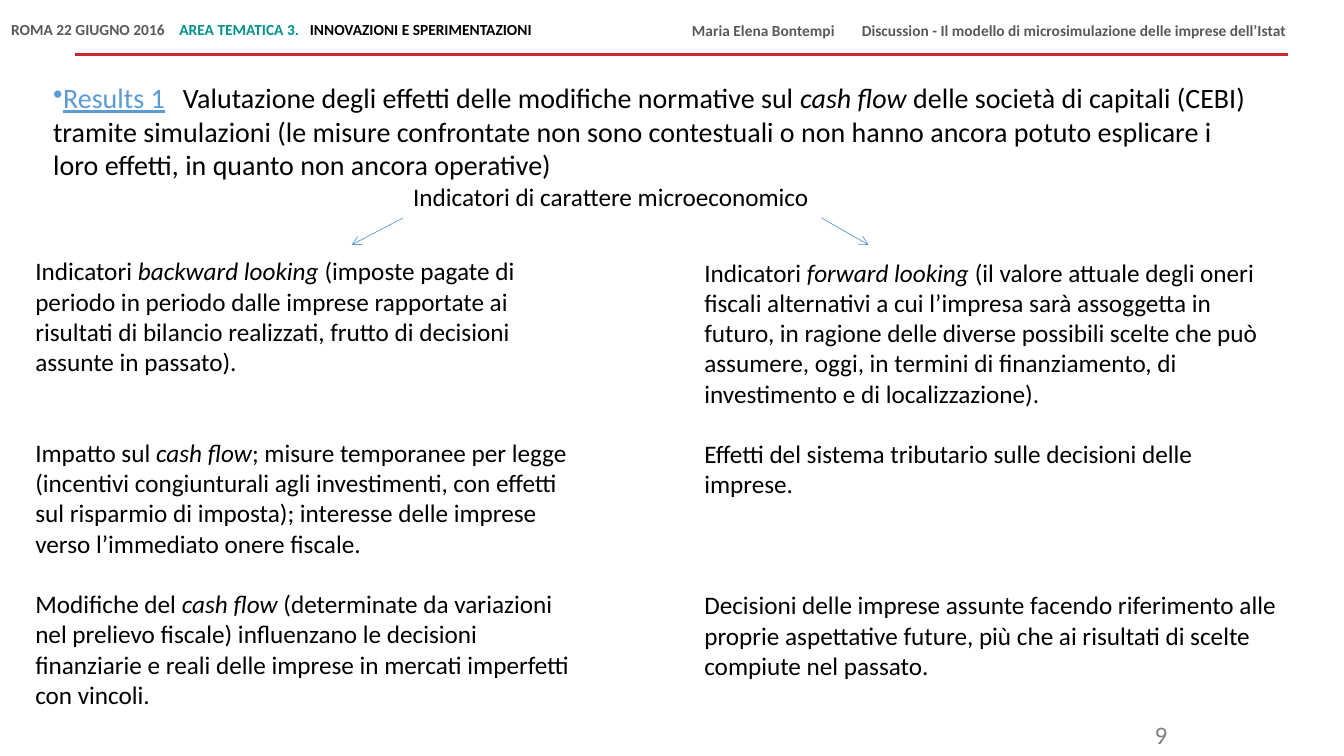
from lxml.etree import SubElement as Sub
from pptx import Presentation
from pptx.dml.color import RGBColor as RGB
from pptx.enum.shapes import MSO_CONNECTOR as Link
from pptx.enum.text import PP_ALIGN as Align
from pptx.oxml.ns import qn
from pptx.util import Cm, Pt

HUES = {"red": "C72A31", "gray": "595959", "teal": "009190", "black": "000000",
        "pale": "7F7F7F", "blue": "5B9BD5"}
PITCH = 21.6

SLANT = {"italic": True}
DARK = {"bold": True, "hue": "gray"}
HEAD = {"size": 11, "inset": 0, "lead": Pt(10.8)}

BOXES = [
    {"at": (0.28, 0.58, 13.79, 0.41), **HEAD, "tabs": (4.24, 7.53), "paras": [
        (0, [("ROMA 22 GIUGNO 2016", DARK),
             ("\tAREA TEMATICA 3.", {"bold": True, "hue": "teal"}),
             ("\tINNOVAZIONI E SPERIMENTAZIONI", {"bold": True})])]},
    {"at": (17.44, 0.61, 15.5, 0.41), **HEAD, "tabs": (4.28,), "paras": [
        (0, [("Maria Elena Bontempi\tDiscussion - Il modello di microsimulazione "
              "delle imprese dell’Istat", DARK)])]},
    {"at": (27.66, 18.01, 2.01, 0.89), "align": Align.RIGHT, "paras": [
        (0, [("9", {"hue": "pale"})])]},
    {"at": (1.09, 1.91, 30.68, 2.46), "size": 20, "tabs": (3.27,), "bullet": "•", "paras": [
        (0, [("Results 1", {"hue": "blue", "underline": True}),
             ("\tValutazione degli effetti delle modifiche normative sul ", {}),
             ("cash flow ", SLANT),
             ("delle società di capitali (CEBI) tramite simulazioni (le misure confrontate "
              "non sono contestuali o non hanno ancora potuto esplicare i loro effetti, "
              "in quanto non ancora operative)", {})])]},
    {"at": (0.64, 6.32, 14.33, 11.79), "paras": [
        (0, [("Indicatori ", {}), ("backward looking ", SLANT),
             ("(imposte pagate di periodo in periodo dalle imprese rapportate ai risultati "
              "di bilancio realizzati, frutto di decisioni assunte in passato).", {})]),
        (2, [("Impatto sul ", {}), ("cash flow", SLANT),
             ("; misure temporanee per legge (incentivi congiunturali agli investimenti, "
              "con effetti sul risparmio di imposta); interesse delle imprese verso "
              "l’immediato onere fiscale.", {})]),
        (1, [("Modifiche del ", {}), ("cash flow ", SLANT),
             ("(determinate da variazioni nel prelievo fiscale) influenzano le decisioni "
              "finanziarie e reali delle imprese in mercati imperfetti con vincoli.", {})])]},
    {"at": (17.5, 6.35, 15.09, 11.02), "paras": [
        (0, [("Indicatori ", {}), ("forward looking ", SLANT),
             ("(il valore attuale degli oneri fiscali alternativi a cui l’impresa sarà "
              "assoggetta in futuro, in ragione delle diverse possibili scelte che può "
              "assumere, oggi, in termini di finanziamento, di investimento e di "
              "localizzazione).", {})]),
        (1, [("Effetti del sistema tributario sulle decisioni delle imprese.", {})]),
        (3, [("Decisioni delle imprese assunte facendo riferimento alle proprie aspettative "
              "future, più che ai risultati di scelte compiute nel passato.", {})])]},
    {"at": (10.16, 4.45, 10.92, 1.02), "paras": [
        (0, [("Indicatori di carattere microeconomico", {})])]},
]

LINES = [
    ((32.46, 1.37, 1.9, 1.37), "red", 2, False),
    ((10.16, 5.49, 8.86, 6.17), "blue", 0.5, True),
    ((20.7, 5.49, 21.89, 6.17), "blue", 0.5, True),
]


def paint(run, size, look):
    form = {"name": "Calibri", "size": Pt(size), **look}
    hue = form.pop("hue", "black")
    for key, val in form.items():
        setattr(run.font, key, val)
    run.font.color.rgb = RGB.from_string(HUES[hue])


def mark(para, box):
    props = para._p.get_or_add_pPr()
    if "bullet" in box:
        props.set("marL", "0")
        props.set("indent", "0")
        Sub(props, qn("a:buChar"), char=box["bullet"])
    if "tabs" in box:
        tabs = Sub(props, qn("a:tabLst"))
        for pos in box["tabs"]:
            Sub(tabs, qn("a:tab"), pos=str(int(Cm(pos))), algn="l")


def write(slide, box):
    frame = slide.shapes.add_textbox(*map(Cm, box["at"])).text_frame
    frame.word_wrap = True
    if "inset" in box:
        for side in ("left", "top", "right", "bottom"):
            setattr(frame, "margin_" + side, Cm(box["inset"]))
    for i, (gap, runs) in enumerate(box["paras"]):
        para = frame.add_paragraph() if i else frame.paragraphs[0]
        mark(para, box)
        form = {"alignment": box.get("align", Align.LEFT),
                "line_spacing": box.get("lead", 1.0), "space_before": Pt(gap * PITCH)}
        for key, val in form.items():
            setattr(para, key, val)
        for text, look in runs:
            run = para.add_run()
            run.text = text
            paint(run, box.get("size", 18), look)


def draw(slide, ends, hue, width, tip):
    link = slide.shapes.add_connector(Link.STRAIGHT, *map(Cm, ends))
    link.line.color.rgb = RGB.from_string(HUES[hue])
    link.line.width = Pt(width)
    if tip:
        Sub(link.line._get_or_add_ln(), qn("a:tailEnd"), type="arrow")
    Sub(link._element.spPr, qn("a:effectLst"))


def main():
    """Build the slide on results of the cash flow simulations."""
    deck = Presentation()
    deck.slide_width, deck.slide_height = Cm(33.87), Cm(19.05)
    slide = deck.slides.add_slide(deck.slide_layouts[6])
    for line in LINES:
        draw(slide, *line)
    for box in BOXES:
        write(slide, box)
    deck.save("out.pptx")


if __name__ == "__main__":
    main()
